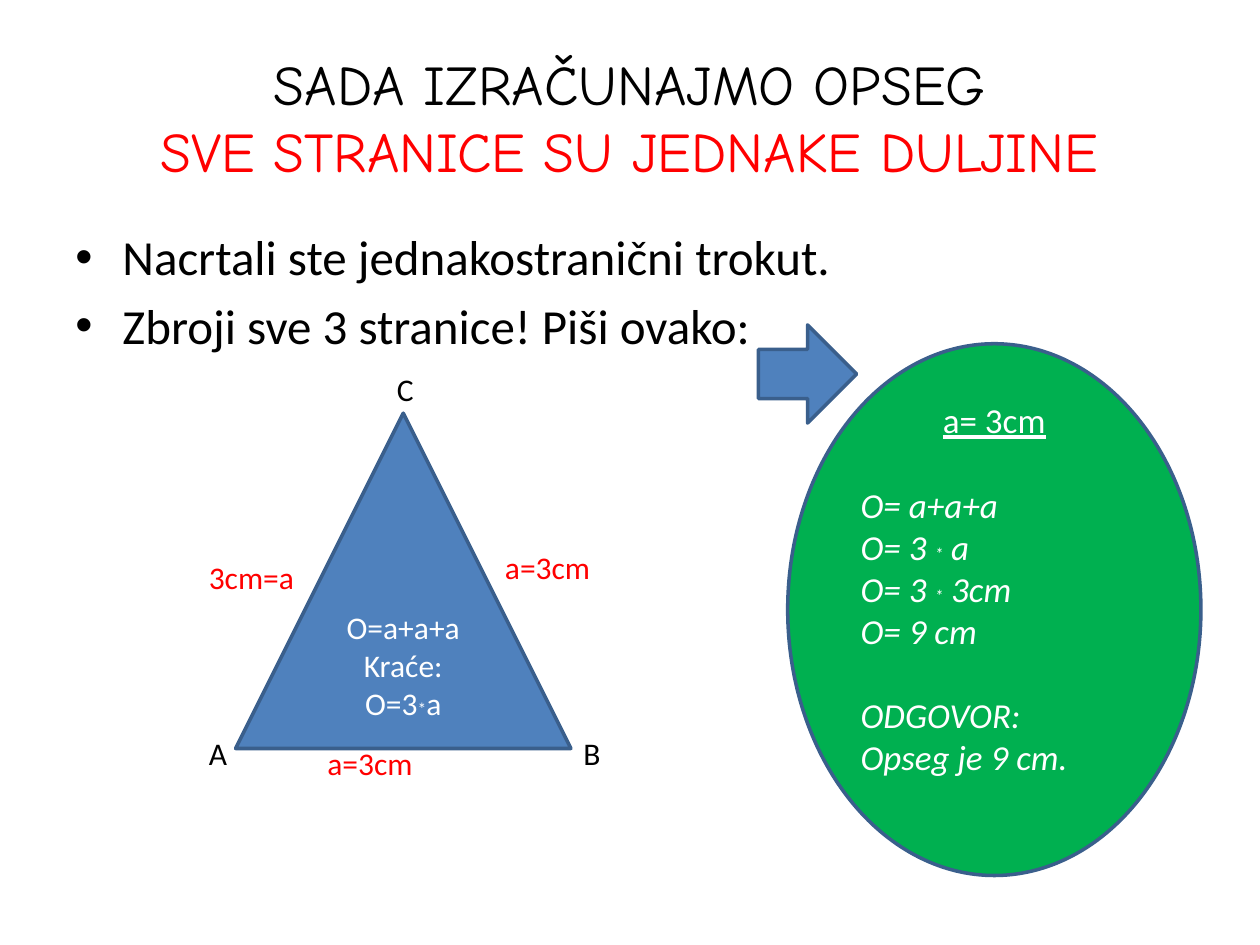
from lxml.etree import SubElement
from pptx import Presentation
from pptx.dml.color import RGBColor
from pptx.enum.shapes import MSO_SHAPE as Shape
from pptx.enum.text import MSO_ANCHOR as Anchor, PP_ALIGN as Align
from pptx.oxml.ns import qn
from pptx.util import Cm, Pt

COLOURS = {
    "black": "000000",
    "red": "FF0000",
    "white": "FFFFFF",
    "blue": "4F81BD",
    "green": "00B050",
    "outline": "3A5F8C",
}
BODY = {"name": "Calibri", "size": Pt(18)}
TITLE = {"name": "Comic Neue", "size": Pt(32)}
BULLET = BODY | {"size": Pt(28)}
GIVEN = BODY | {"size": Pt(20), "underline": True}
WORKING = BODY | {"size": Pt(20), "italic": True}
TIMES = {"size": Pt(10)}
LINE_GAP = Pt(24.4)


def colour(name):
    """Return the named colour."""
    return RGBColor.from_string(COLOURS[name])


def apply_format(target, values):
    """Set every attribute in values on target."""
    for attribute, value in values.items():
        setattr(target, attribute, value)


def add_run(paragraph, text, font, ink):
    """Append one formatted run to a paragraph."""
    run = paragraph.add_run()
    run.text = text
    apply_format(run.font, font)
    run.font.color.rgb = colour(ink)


def add_line(frame, text, font, ink, first=False, **layout):
    """Write one paragraph, with each asterisk as a small times sign."""
    paragraph = frame.paragraphs[0] if first else frame.add_paragraph()
    apply_format(paragraph, layout)
    for index, part in enumerate(text.split("*")):
        if index:
            add_run(paragraph, "*", font | TIMES, ink)
        add_run(paragraph, part, font, ink)
    return paragraph


def add_text_frame(slide, left, top, width, height, **layout):
    """Add a wrapping text box and return its frame."""
    frame = slide.shapes.add_textbox(Cm(left), Cm(top), Cm(width), Cm(height)).text_frame
    apply_format(frame, {"word_wrap": True} | layout)
    return frame


def add_figure(slide, kind, left, top, width, height, fill):
    """Add an outlined preset shape and return its text frame."""
    figure = slide.shapes.add_shape(kind, Cm(left), Cm(top), Cm(width), Cm(height))
    figure.shadow.inherit = False
    figure.fill.solid()
    figure.fill.fore_color.rgb = colour(fill)
    figure.line.color.rgb = colour("outline")
    figure.line.width = Pt(2)
    apply_format(figure.text_frame, {"word_wrap": True, "vertical_anchor": Anchor.MIDDLE})
    return figure.text_frame


def add_title(slide):
    """Add the two-coloured heading."""
    frame = add_text_frame(slide, 1.27, 0.76, 22.86, 3.18, vertical_anchor=Anchor.MIDDLE)
    heading = add_line(frame, "SADA IZRAČUNAJMO OPSEG", TITLE, "black",
                       first=True, alignment=Align.CENTER)
    heading.add_line_break()
    add_run(heading, "SVE STRANICE SU JEDNAKE DULJINE", TITLE, "red")


def add_instructions(slide):
    """Add the bulleted instructions."""
    frame = add_text_frame(slide, 1.27, 4.45, 22.86, 12.57)
    lines = ["Nacrtali ste jednakostranični trokut.", "Zbroji sve 3 stranice! Piši ovako:"]
    for index, text in enumerate(lines):
        paragraph = add_line(frame, text, BULLET, "black",
                             first=index == 0, space_before=Pt(5.6))
        properties = paragraph._p.get_or_add_pPr()
        properties.set("marL", str(Cm(0.95)))
        properties.set("indent", str(Cm(-0.95)))
        SubElement(properties, qn("a:buFont"), typeface="Arial")
        SubElement(properties, qn("a:buChar"), char="•")


def add_triangle(slide):
    """Add the triangle with its formula, side and vertex labels."""
    frame = add_figure(slide, Shape.ISOSCELES_TRIANGLE, 4.75, 8.33, 6.76, 6.76, "blue")
    for index, text in enumerate(["O=a+a+a", "Kraće: O=3*a"]):
        add_line(frame, text, BODY, "white", first=index == 0, alignment=Align.CENTER)
    labels = [
        ("a=3cm", 6.35, 14.88, 3.18, "red"),
        ("a=3cm", 9.93, 10.92, 3.38, "red"),
        ("3cm=a", 3.96, 11.13, 2.79, "red"),
        ("A", 3.96, 14.68, 1.27, "black"),
        ("B", 11.51, 14.68, 1.19, "black"),
        ("C", 7.75, 7.34, 1.07, "black"),
    ]
    for text, left, top, width, ink in labels:
        label = add_text_frame(slide, left, top, width, 1.02)
        add_line(label, text, BODY, ink, first=True)


def add_solution(slide):
    """Add the ellipse with the worked solution."""
    frame = add_figure(slide, Shape.OVAL, 15.88, 6.93, 8.33, 10.72, "green")
    frame.margin_bottom = Cm(0.13) + LINE_GAP
    add_line(frame, "a= 3cm", GIVEN, "white", first=True, alignment=Align.CENTER)
    groups = [
        ["O= a+a+a", "O= 3 * a", "O= 3 * 3cm", "O= 9 cm"],
        ["ODGOVOR:", "Opseg je 9 cm."],
    ]
    for group in groups:
        for index, text in enumerate(group):
            add_line(frame, text, WORKING, "white", alignment=Align.LEFT,
                     space_before=Pt(0) if index else LINE_GAP)


def main():
    """Build the slide on the perimeter of an equilateral triangle."""
    presentation = Presentation()
    apply_format(presentation, {"slide_width": Cm(25.4), "slide_height": Cm(19.05)})
    slide = presentation.slides.add_slide(presentation.slide_layouts[6])
    add_title(slide)
    add_instructions(slide)
    add_triangle(slide)
    add_solution(slide)
    add_figure(slide, Shape.RIGHT_ARROW, 15.29, 6.55, 1.98, 1.98, "blue")
    presentation.save("out.pptx")


if __name__ == "__main__":
    main()
